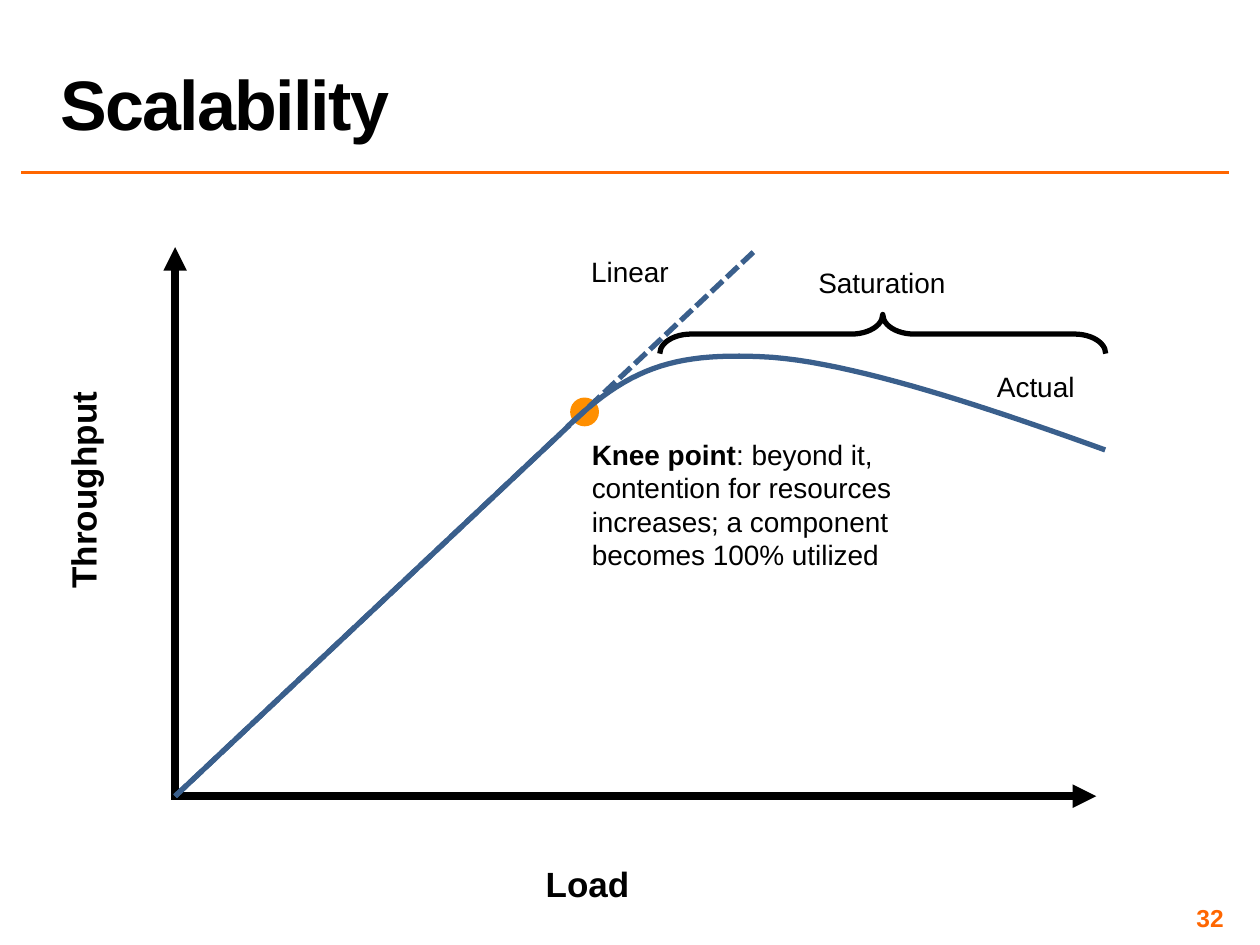
"""Builds the Scalability slide: throughput against load, with the knee point."""
from lxml.etree import SubElement
from pptx import Presentation
from pptx.dml.color import RGBColor
from pptx.enum.dml import MSO_LINE
from pptx.enum.shapes import MSO_CONNECTOR, MSO_SHAPE
from pptx.enum.text import MSO_ANCHOR as Anchor, PP_ALIGN as Align
from pptx.oxml.ns import qn
from pptx.util import Cm, Pt

COLORS = {"ink": "000000", "rule": "FF6600", "knee": "FF8F00", "curve": "3A5F8C"}
FONT = "Arial"
ORIGIN = (3.53, 16.05)

AXIS = dict(color="ink", width=4.5, arrow=True)
LINES = [
    ((0.43, 3.48), (24.77, 3.48), dict(color="rule", width=2)),
    ((3.53, 16.1), (3.53, 4.98), AXIS),
    ((3.45, 16.05), (22.1, 16.05), AXIS),
    (ORIGIN, (15.19, 5.08), dict(color="curve", width=3, dash=MSO_LINE.SQUARE_DOT)),
    (ORIGIN, (11.28, 8.76), dict(color="curve", width=3)),
]
ACTUAL_START = (11.43, 8.61)
ACTUAL_BENDS = [
    ((12.65, 7.44), (13.54, 7.11), (15.34, 7.19)),
    ((17.15, 7.26), (20.17, 8.31), (22.28, 9.07)),
]
STEPS = 24

AXIS_NAME = dict(size=20, bold=True, align=Align.CENTER, wrap=False)
LABEL = dict(align=Align.CENTER, wrap=False)
TEXTS = [
    ([("Scalability", True)], (0.97, 0.05, 23.8, 2.97),
     dict(size=40, anchor=Anchor.BOTTOM, line_spacing=0.8, tracking=-1)),
    ([("32", True)], (18.85, 18.21, 5.92, 0.58),
     dict(size=14, color="rule", align=Align.RIGHT, anchor=Anchor.MIDDLE, inset=0.1)),
    ([("Throughput", True)], (-0.58, 9.32, 4.52, 1.12), dict(AXIS_NAME, rotation=270)),
    ([("Load", True)], (10.74, 17.27, 2.21, 1.12), AXIS_NAME),
    ([("Saturation", False)], (16.23, 5.23, 3.1, 0.94), LABEL),
    ([("Linear", False)], (11.66, 5.0, 2.08, 0.94), LABEL),
    ([("Actual", False)], (19.84, 7.32, 2.08, 0.94), LABEL),
    ([("Knee point", True),
      (": beyond it, contention for resources increases; "
       "a component becomes 100% utilized", False)],
     (11.68, 8.69, 7.75, 3.0), {}),
]
BRACE = (17.4, 2.24, 0.79, 8.99)
KNEE = (11.53, 8.05, 0.51, 0.51)


def rgb(name):
    return RGBColor.from_string(COLORS[name])


def set_line(line, color, width):
    line.color.rgb = rgb(color)
    line.width = Pt(width)


def add_text(slide, runs, place, size=16, color="ink", bold=None, align=Align.LEFT,
             anchor=Anchor.TOP, wrap=True, inset=None, rotation=0,
             line_spacing=None, tracking=None):
    box = slide.shapes.add_textbox(*map(Cm, place))
    box.rotation = rotation
    frame = box.text_frame
    frame.word_wrap = wrap
    frame.vertical_anchor = anchor
    if inset is not None:
        frame.margin_left = frame.margin_right = Cm(inset)
        frame.margin_top = frame.margin_bottom = Cm(inset)
    paragraph = frame.paragraphs[0]
    paragraph.alignment = align
    paragraph.line_spacing = line_spacing
    for words, strong in runs:
        run = paragraph.add_run()
        run.text = words
        font = run.font
        font.name, font.size = FONT, Pt(size)
        font.bold = strong if bold is None else bold
        font.color.rgb = rgb(color)
        if tracking is not None:
            run._r.get_or_add_rPr().set("spc", str(tracking * 100))


def add_line(slide, start, end, color, width, dash=None, arrow=False):
    connector = slide.shapes.add_connector(
        MSO_CONNECTOR.STRAIGHT, *map(Cm, start + end))
    set_line(connector.line, color, width)
    if dash:
        connector.line.dash_style = dash
    if arrow:
        SubElement(connector.line._get_or_add_ln(), qn("a:tailEnd"), type="triangle")
    SubElement(connector._element.spPr, qn("a:effectLst"))


def bezier(p0, p1, p2, p3, t):
    s = 1 - t
    return tuple(s**3 * a + 3 * s * s * t * b + 3 * s * t * t * c + t**3 * d
                 for a, b, c, d in zip(p0, p1, p2, p3))


def add_actual_curve(slide):
    points, start = [], ACTUAL_START
    for bend in ACTUAL_BENDS:
        points += [bezier(start, *bend, step / STEPS) for step in range(1, STEPS + 1)]
        start = bend[-1]
    builder = slide.shapes.build_freeform(*map(Cm, ACTUAL_START), scale=1.0)
    builder.add_line_segments([(Cm(x), Cm(y)) for x, y in points], close=False)
    curve = builder.convert_to_shape()
    curve.shadow.inherit = False
    curve.fill.background()
    set_line(curve.line, "curve", 3)


def add_preset(slide, preset, place, color, width):
    shape = slide.shapes.add_shape(preset, *map(Cm, place))
    shape.shadow.inherit = False
    shape.fill.background()
    set_line(shape.line, color, width)
    return shape


def main():
    deck = Presentation()
    deck.slide_width, deck.slide_height = Cm(25.4), Cm(19.05)
    slide = deck.slides.add_slide(deck.slide_layouts[6])

    for runs, place, style in TEXTS:
        add_text(slide, runs, place, **style)

    brace = add_preset(slide, MSO_SHAPE.LEFT_BRACE, BRACE, "ink", 3)
    brace.rotation = 90
    brace.adjustments[0] = 0.8
    knee = add_preset(slide, MSO_SHAPE.OVAL, KNEE, "knee", 2)
    knee.fill.solid()
    knee.fill.fore_color.rgb = rgb("knee")

    for start, end, style in LINES:
        add_line(slide, start, end, **style)
    add_actual_curve(slide)
    deck.save("out.pptx")


if __name__ == "__main__":
    main()
